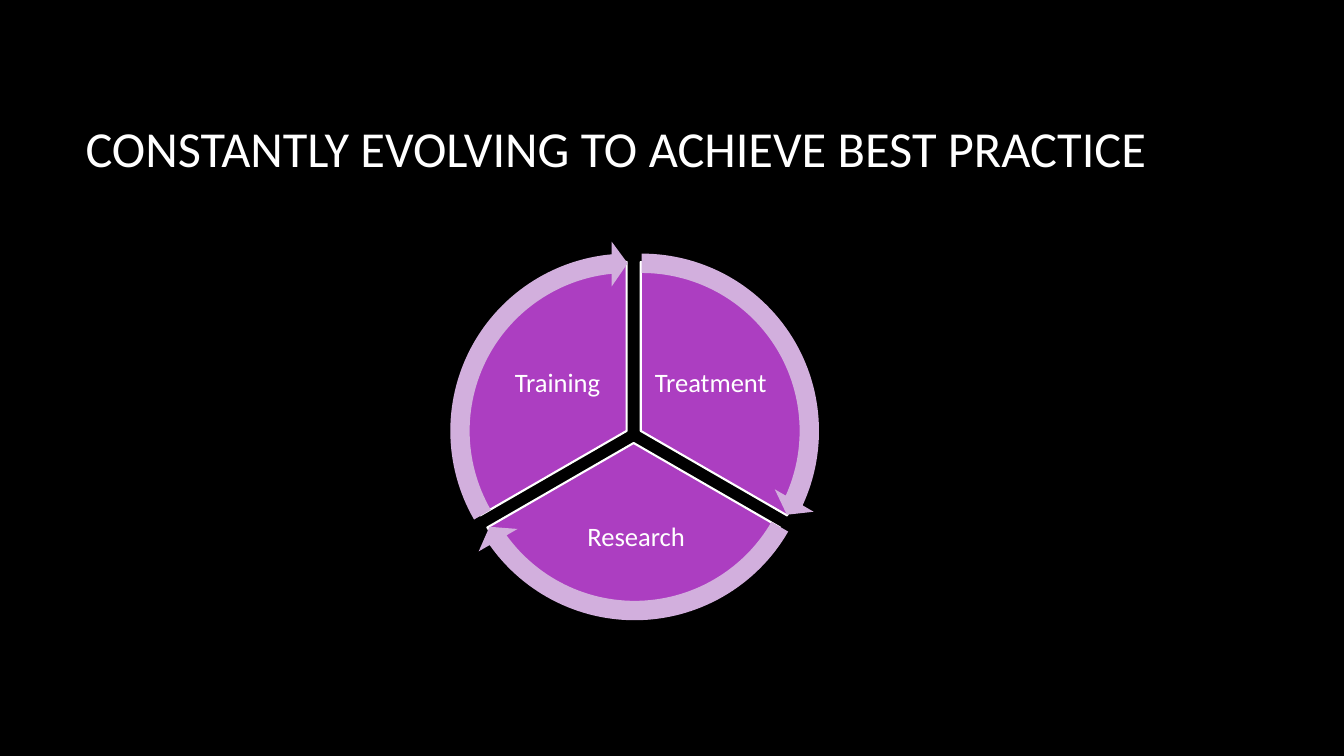
from pptx import Presentation
from pptx.dml.color import RGBColor
from pptx.enum.shapes import MSO_SHAPE
from pptx.enum.text import MSO_ANCHOR, PP_ALIGN
from pptx.util import Pt

PIE = MSO_SHAPE.PIE
ARROW = MSO_SHAPE.CIRCULAR_ARROW
MIDDLE = MSO_ANCHOR.MIDDLE
LEFT, CENTER = PP_ALIGN.LEFT, PP_ALIGN.CENTER
SCALE = 9144
COLORS = {"back": "000000", "text": "FFFFFF", "wedge": "AC3EC1", "arrow": "D2AFDD"}


class Deck:
    """Holds the style and the current slide, and draws its elements."""

    def __init__(self, width, height, font):
        self.font = font
        self.prs = Presentation()
        self.prs.slide_width = width * SCALE
        self.prs.slide_height = height * SCALE
        self.slide = self.prs.slides.add_slide(self.prs.slide_layouts[6])
        self.paint(self.slide.background.fill, "back")

    def paint(self, fill, color):
        fill.solid()
        fill.fore_color.rgb = RGBColor.from_string(COLORS[color])

    def shape(self, kind, box, angles, color, line=None):
        item = self.slide.shapes.add_shape(kind, *[n * SCALE for n in box])
        item.shadow.inherit = False
        for i, angle in enumerate(angles):
            item.adjustments[i] = angle
        self.paint(item.fill, color)
        if line:
            self.paint(item.line.fill, line)
            item.line.width = Pt(1.5)
        else:
            item.line.fill.background()

    def text(self, words, box, size, align, inset, space=1.0):
        item = self.slide.shapes.add_textbox(*[n * SCALE for n in box])
        frame = item.text_frame
        frame.word_wrap = True
        frame.vertical_anchor = MIDDLE
        frame.margin_left = frame.margin_right = inset * SCALE
        frame.margin_top = frame.margin_bottom = inset * SCALE
        para = frame.paragraphs[0]
        para.alignment = align
        para.line_spacing = space
        run = para.add_run()
        run.text = words
        run.font.name = self.font
        run.font.size = Pt(size)
        run.font.color.rgb = RGBColor.from_string(COLORS["text"])


def main():
    deck = Deck(1333, 750, "Calibri")
    deck.text("CONSTANTLY EVOLVING TO ACHIEVE BEST PRACTICE",
              (75, 67, 1108, 159), 36, LEFT, 10)
    turns = [162, 18, 90]
    tops = [260, 272, 260]
    labels = [("Treatment", (645, 331, 120, 100)),
              ("Research", (541, 490, 180, 88)),
              ("Training", (493, 331, 120, 100))]
    for i, (words, box) in enumerate(labels):
        deck.shape(PIE, (468 - 7 * i, tops[i], 335, 335),
                   (turns[i], turns[(i + 1) % 3]), "wedge", "text")
        deck.text(words, box, 19, CENTER, 3, 0.9)
    ends = [14.73, 86.72, 158.73]
    for i, end in enumerate(ends):
        deck.shape(ARROW, (448 - 7 * i, tops[i] - 21, 377, 377),
                   (0.051, 3.275, end, turns[i], 0.059), "arrow")
    deck.prs.save("out.pptx")


if __name__ == "__main__":
    main()
